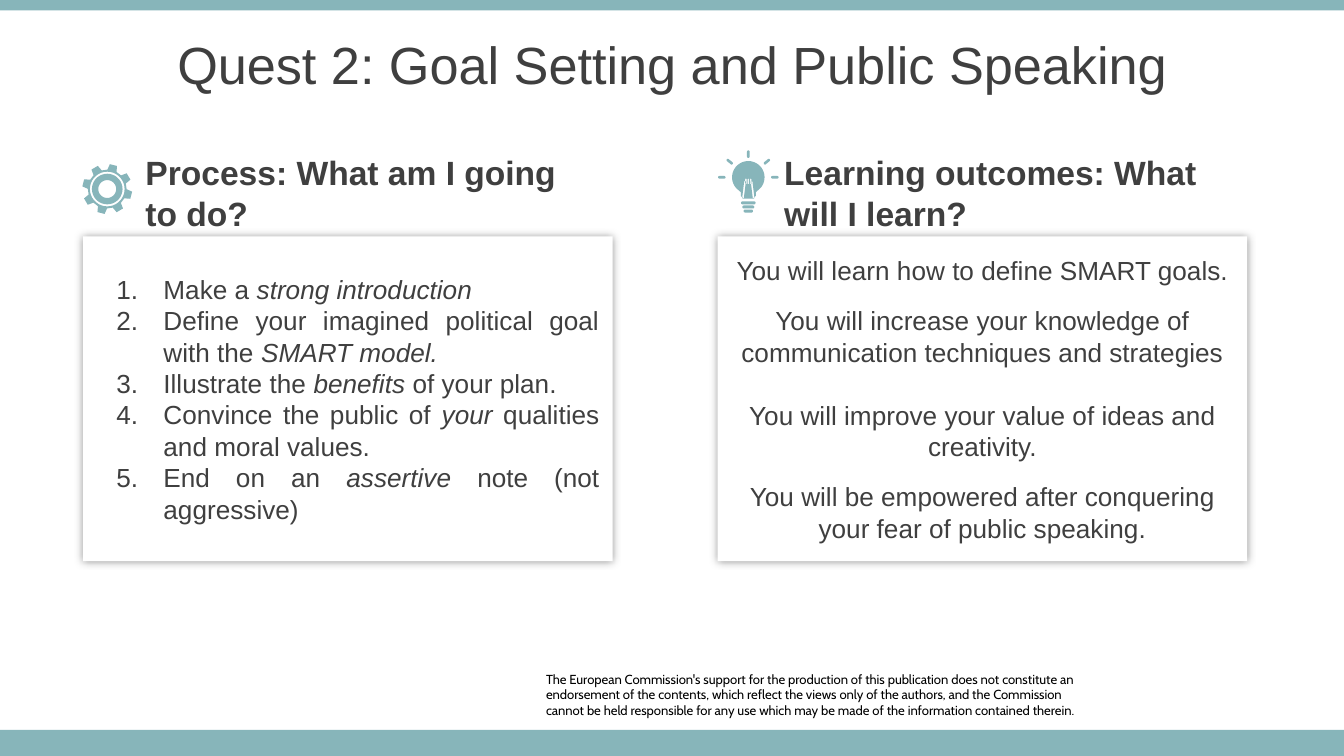
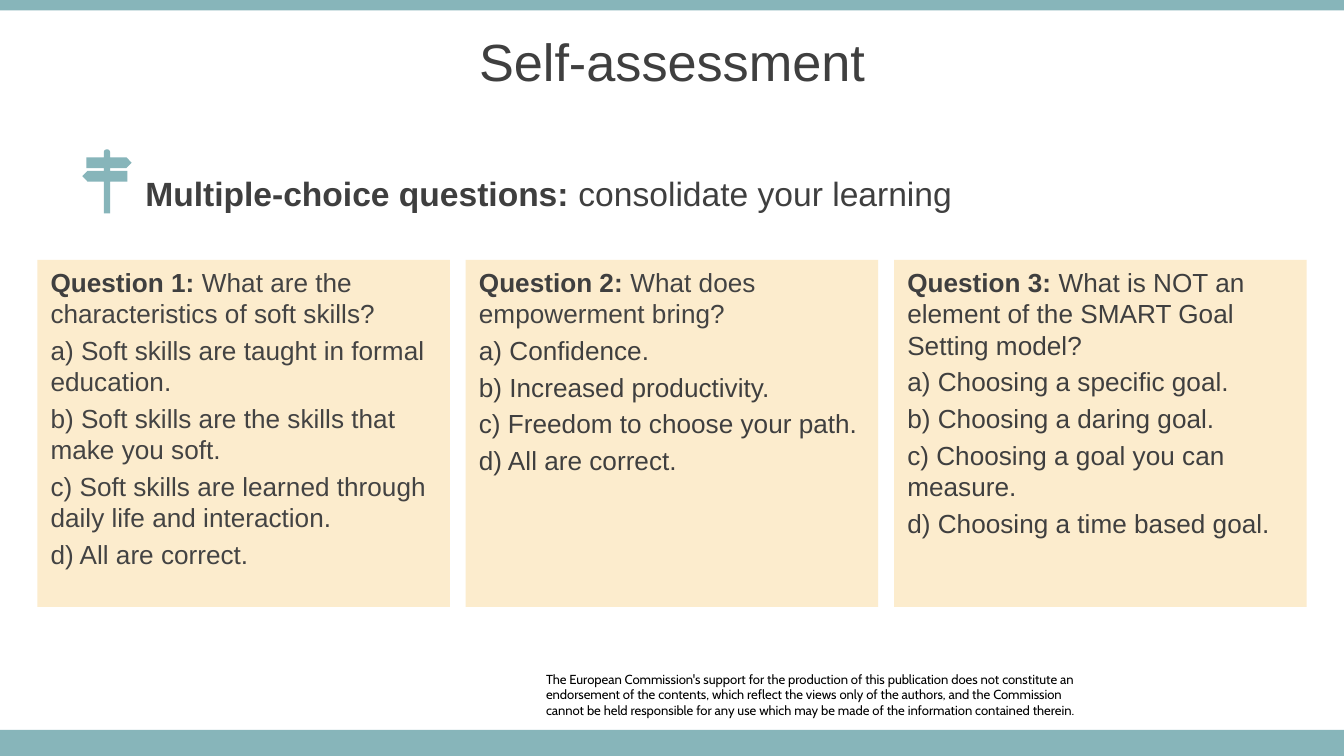
from math import cos, sin, radians

from lxml.etree import SubElement
from pptx import Presentation
from pptx.dml.color import RGBColor
from pptx.enum.shapes import MSO_SHAPE as Shape
from pptx.enum.text import MSO_ANCHOR as Anchor, MSO_AUTO_SIZE as AutoSize, PP_ALIGN as Align
from pptx.oxml.ns import qn
from pptx.util import Pt

TEAL = RGBColor(0x87, 0xB5, 0xBA)
CREAM = RGBColor(0xFC, 0xEC, 0xCD)
DARK = RGBColor(0x3F, 0x3F, 0x3F)
GREY = RGBColor(0x43, 0x43, 0x43)
WHITE = RGBColor(0xFF, 0xFF, 0xFF)
BLACK = RGBColor(0, 0, 0)

WIDTH, HEIGHT = 720, 405
INSETS = (7.2, 3.6, 7.2, 3.6)
BOLD = {"bold": True}
ITALIC = {"italic": True}

DISCLAIMER = [
    "The European Commission's support for the production of this publication does not "
    "constitute an endorsement of the contents, which reflect the views only of the authors, "
    "and the Commission",
    "cannot be held responsible for any use which may be made of the information contained therein.",
]
STEPS = [
    [("Make a ", {}), ("strong introduction", ITALIC)],
    [("Define your imagined political goal with the ", {}), ("SMART model.", ITALIC)],
    [("Illustrate the ", {}), ("benefits", ITALIC), (" of your plan.", {})],
    [("Convince the public of ", {}), ("your", ITALIC), (" qualities and moral values.", {})],
    [("End on an ", {}), ("assertive ", ITALIC), ("note (not aggressive)", {})],
]
OUTCOMES = [
    ("You will learn how to define SMART goals.", 0),
    ("You will increase your knowledge of communication techniques and strategies", 10),
    ("You will improve your value of ideas and creativity.", 17),
    ("You will be empowered after conquering your fear of public speaking.", 10),
]
QUESTIONS = [
    ("What are the characteristics of soft skills?", GREY, GREY, [
        "a) Soft skills are taught in formal education.",
        "b) Soft skills are the skills that make you soft.",
        "c) Soft skills are learned through daily life and interaction.",
        "d) All are correct."]),
    ("What does empowerment bring?", GREY, DARK, [
        "a) Confidence.",
        "b) Increased productivity.",
        "c) Freedom to choose your path.",
        "d) All are correct."]),
    ("What is NOT an element of the SMART Goal Setting model?", DARK, DARK, [
        "a) Choosing a specific goal.",
        "b) Choosing a daring goal.",
        "c) Choosing a goal you can measure.",
        "d) Choosing a time based goal."]),
]


def polar(x, y, radius, angle):
    return x + radius * cos(radians(angle)), y + radius * sin(radians(angle))


def arc(x, y, radius, start=0, end=360, steps=36):
    return [polar(x, y, radius, start + (end - start) * i / steps) for i in range(steps + 1)]


def capsule(x, y, length, width, angle=0):
    reach = (length - width) / 2
    outline = []
    for turn in (angle, angle + 180):
        outline += arc(*polar(x, y, reach, turn), width / 2, turn - 90, turn + 90, 8)
    return outline


def gear(x, y):
    teeth = [polar(x, y, radius, 45 * tooth - 75.5 + offset)
             for tooth in range(8)
             for radius, offset in ((10.4, -14), (13.4, -8.5), (13.4, 8.5), (10.4, 14))]
    return [teeth] + [arc(x, y, radius) for radius in (9.3, 8.2, 4.8)]


def bulb(x, y):
    neck = [(4, 8), (4, 10), (2.5, 11.5), (-2.5, 11.5), (-4, 10), (-4, 8)]
    body = arc(x, y, 8.7, 137, 403) + [(x + dx, y + dy) for dx, dy in neck]
    rays = [capsule(*polar(x, y, distance, angle), 4, 1.4, angle)
            for angle, distance in ((180, 14.2), (220, 13), (270, 12.4), (320, 13), (360, 14.2))]
    base = [capsule(x, y + dy, length, 1.6) for dy, length in ((13.7, 7.8), (15.9, 6.4), (18.1, 5))]
    legs = [capsule(x + side * 2.3, y + 6.7, 9.4, 0.9, 90 - side * 7) for side in (-1, 1)]
    coils = [capsule(x + dx, y + 2.2, 3, 0.7, 90) for dx in (-1.3, 0, 1.3)]
    return [body] + rays + base + legs + coils


def signpost(x, y):
    right = [(1.7, 4.3), (10.4, 4.3), (13.2, 7.2), (10.4, 10.1), (1.7, 10.1),
             (1.7, 11.6), (10.9, 11.6), (10.9, 17.3), (1.7, 17.3), (1.7, 34.4)]
    left = [(-1.7, 34.4), (-1.7, 17.3), (-10.4, 17.3), (-13.2, 14.4), (-10.4, 11.6),
            (-1.7, 11.6), (-1.7, 10.1), (-11, 10.1), (-11, 4.3), (-1.7, 4.3)]
    return [arc(x, y + 1.7, 1.7, 180, 360, 12) + [(x + dx, y + dy) for dx, dy in right + left]]


class Quest:
    font = {"name": "Arial", "size": Pt(14), "color": DARK}

    def __init__(self):
        self.deck = Presentation()
        self.deck.slide_width, self.deck.slide_height = Pt(WIDTH), Pt(HEIGHT)
        self.page = None

    def add_page(self, title, top, bottom_inset=3.6):
        self.page = self.deck.slides.add_slide(self.deck.slide_layouts[6])
        footer = self.text((292.5, 359.5, 300, 25), [([(line, {})], {}) for line in DISCLAIMER],
                           Anchor.TOP, (0, 0, 0, 0), name="Cabin", size=Pt(7), color=BLACK)
        footer.text_frame.auto_size = AutoSize.SHAPE_TO_FIT_TEXT
        self.panel((0, 391, WIDTH, 14), TEAL)
        self.panel((0, 0, WIDTH, 5.6), TEAL)
        self.text((0, top, WIDTH, 45), [([(title, {})], {"alignment": Align.CENTER})],
                  insets=(7.2, 3.6, 7.2, bottom_inset), size=Pt(28))

    def paint(self, shape, color):
        shape.shadow.inherit = False
        shape.fill.solid()
        shape.fill.fore_color.rgb = color
        shape.line.fill.background()
        return shape

    def panel(self, area, color):
        return self.paint(self.page.shapes.add_shape(Shape.RECTANGLE, *map(Pt, area)), color)

    def icon(self, outlines):
        first, *others = [[(Pt(x), Pt(y)) for x, y in outline] for outline in outlines]
        builder = self.page.shapes.build_freeform(*first[0])
        builder.add_line_segments(first[1:])
        for outline in others:
            builder.move_to(*outline[0])
            builder.add_line_segments(outline[1:])
        return self.paint(builder.convert_to_shape(), TEAL)

    def text(self, area, paras, anchor=Anchor.MIDDLE, insets=INSETS, **style):
        box = self.page.shapes.add_textbox(*map(Pt, area))
        self.fill_text(box, paras, anchor, insets, **style)
        return box

    def heading(self, left, width, spans):
        self.text((left, 92, width, 22.5), [(spans, {})], size=Pt(18))

    def shadow(self, shape):
        effects = shape._element.spPr.find(qn("a:effectLst"))
        outer = SubElement(effects, qn("a:outerShdw"), blurRad=str(Pt(5)), dist="0",
                           algn="ctr", rotWithShape="0")
        color = SubElement(outer, qn("a:srgbClr"), val=str(BLACK))
        SubElement(color, qn("a:alpha"), val="40000")

    def framed(self, left, paras, numbered=False):
        box = self.panel((left, 126.7, 283.7, 174), WHITE)
        self.shadow(box)
        self.fill_text(box, paras, Anchor.MIDDLE)
        if numbered:
            for para in box.text_frame.paragraphs:
                self.number(para)

    def number(self, para):
        props = para._p.get_or_add_pPr()
        props.set("marL", str(Pt(36)))
        props.set("indent", str(Pt(-25.2)))
        color = SubElement(props, qn("a:buClr"))
        SubElement(color, qn("a:srgbClr"), val=str(DARK))
        SubElement(props, qn("a:buAutoNum"), type="arabicPeriod")

    def fill_text(self, box, paras, anchor, insets=INSETS, **style):
        frame = box.text_frame
        frame.word_wrap = True
        frame.vertical_anchor = anchor
        for side, inset in zip(("left", "top", "right", "bottom"), insets):
            setattr(frame, f"margin_{side}", Pt(inset))
        for index, (spans, layout) in enumerate(paras):
            para = frame.add_paragraph() if index else frame.paragraphs[0]
            for key, value in {"alignment": Align.LEFT, **layout}.items():
                setattr(para, key, value)
            for words, format_values in spans:
                span = para.add_run()
                span.text = words
                values = {**self.font, **style, **format_values}
                span.font.color.rgb = values.pop("color")
                for key, value in values.items():
                    setattr(span.font, key, value)


def build_goals(quest):
    quest.add_page("Quest 2: Goal Setting and Public Speaking", 28, 36)
    quest.icon(gear(57.5, 101.3))
    quest.icon(bulb(400.9, 95))
    quest.framed(44.5, [(spans, {"alignment": Align.JUSTIFY}) for spans in STEPS], numbered=True)
    quest.framed(384.5, [([(line, {})], {"alignment": Align.CENTER, "space_before": Pt(gap)})
                         for line, gap in OUTCOMES])
    quest.heading(70.8, 256, [("Process: What am I going to do?", BOLD)])
    quest.heading(413, 256, [("Learning outcomes: What will I learn?", BOLD)])


def build_assessment(quest):
    quest.add_page("Self-assessment", 10)
    quest.heading(70.8, 482, [("Multiple-choice questions: ", BOLD),
                              ("consolidate your learning", {})])
    quest.icon(signpost(57.3, 80))
    margin, card_width = 20, 221
    pitch = (WIDTH - 2 * margin - card_width) / (len(QUESTIONS) - 1)
    for index, (question, question_color, answer_color, answers) in enumerate(QUESTIONS):
        card = quest.panel((margin + index * pitch, 139.2, card_width, 186), CREAM)
        paras = [([(f"Question {index + 1}: ", BOLD), (question, {"color": question_color})], {})]
        paras += [([(answer, {"color": answer_color})], {"space_before": Pt(2.8)})
                  for answer in answers]
        quest.fill_text(card, paras, Anchor.TOP)


def main():
    quest = Quest()
    build_goals(quest)
    build_assessment(quest)
    quest.deck.save("out.pptx")


if __name__ == "__main__":
    main()
